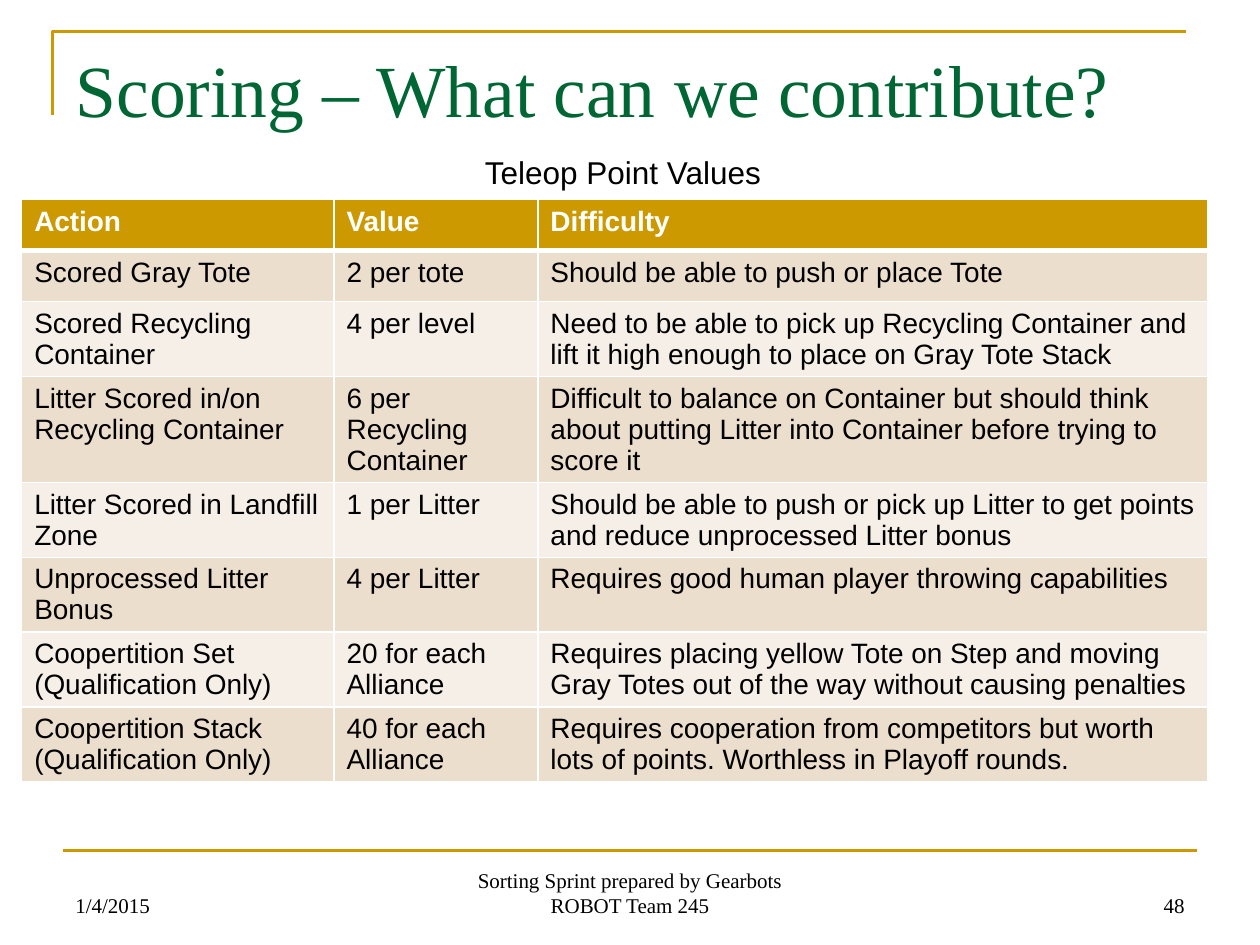
import pptx
import pptx.util
import pptx.dml.color
import pptx.enum.shapes
import pptx.enum.text
from lxml import etree
from pptx.oxml.ns import qn

Pt = pptx.util.Pt
ALIGN = pptx.enum.text.PP_ALIGN
ANCHOR = pptx.enum.text.MSO_ANCHOR
COLORS = {
    "gold": "CC9900",
    "green": "006633",
    "text": "000000",
    "white": "FFFFFF",
    "dark band": "ECDECC",
    "light band": "F6EFE7",
}


def rgb(name):
    return pptx.dml.color.RGBColor.from_string(COLORS[name])


def write(frame, text, font, size, color, align=ALIGN.LEFT, bold=False):
    """Put one formatted run in the first paragraph of a text frame."""
    paragraph = frame.paragraphs[0]
    paragraph.alignment = align
    run = paragraph.add_run()
    run.text = text
    run.font.name = font
    run.font.size = Pt(size)
    run.font.bold = bold
    run.font.color.rgb = rgb(color)


deck = pptx.Presentation()
deck.slide_width, deck.slide_height = Pt(720), Pt(540)
slide = deck.slides.add_slide(deck.slide_layouts[5])
shapes = slide.shapes

# Frame lines
corner_path = shapes.build_freeform(Pt(30), Pt(66))
corner_path.add_line_segments([(Pt(30), Pt(18)), (Pt(678), Pt(18))], close=False)
corner = corner_path.convert_to_shape()
corner.shadow.inherit = False
corner.fill.background()
footer_rule = shapes.add_connector(
    pptx.enum.shapes.MSO_CONNECTOR.STRAIGHT, Pt(36), Pt(486), Pt(684), Pt(486))
etree.SubElement(footer_rule._element.spPr, qn("a:effectLst"))
for rule in (corner, footer_rule):
    rule.line.color.rgb = rgb("gold")
    rule.line.width = Pt(1.5)

# Title
title = shapes.title
title.left, title.top, title.width, title.height = Pt(36), Pt(21.6), Pt(648), Pt(90)
title.text_frame.auto_size = pptx.enum.text.MSO_AUTO_SIZE.NONE
title.text_frame.vertical_anchor = ANCHOR.TOP
write(title.text_frame, "Scoring – What can we contribute?",
      "Times New Roman", 42, "green")

# Point values
scoring = [
    ("Action", "Value", "Difficulty"),
    ("Scored Gray Tote", "2 per tote", "Should be able to push or place Tote"),
    ("Scored Recycling Container", "4 per level",
     "Need to be able to pick up Recycling Container and lift it high enough "
     "to place on Gray Tote Stack"),
    ("Litter Scored in/on Recycling Container", "6 per Recycling Container",
     "Difficult to balance on Container but should think about putting Litter "
     "into Container before trying to score it"),
    ("Litter Scored in Landfill Zone", "1 per Litter",
     "Should be able to push or pick up Litter to get points and reduce "
     "unprocessed Litter bonus"),
    ("Unprocessed Litter Bonus", "4 per Litter",
     "Requires good human player throwing capabilities"),
    ("Coopertition Set (Qualification Only)", "20 for each Alliance",
     "Requires placing yellow Tote on Step and moving Gray Totes out of the "
     "way without causing penalties"),
    ("Coopertition Stack (Qualification Only)", "40 for each Alliance",
     "Requires cooperation from competitors but worth lots of points. "
     "Worthless in Playoff rounds."),
]
column_widths = [178.5, 116.5, 383]
row_height = 29.2
table = shapes.add_table(
    len(scoring), len(column_widths), Pt(12.4), Pt(114),
    Pt(sum(column_widths)), Pt(row_height * len(scoring))).table
for column, width in zip(table.columns, column_widths):
    column.width = Pt(width)

for row, entries in enumerate(scoring):
    table.rows[row].height = Pt(row_height)
    header = row == 0
    band = "gold" if header else "dark band" if row % 2 else "light band"
    # A thicker rule separates the header from the first row
    borders = {"lnL": 1, "lnR": 1, "lnT": 3 if row == 1 else 1,
               "lnB": 3 if header else 1}
    for col, entry in enumerate(entries):
        cell = table.cell(row, col)
        properties = cell._tc.get_or_add_tcPr()
        for side, width in borders.items():
            border = etree.SubElement(properties, qn(f"a:{side}"), w=str(Pt(width)))
            paint = etree.SubElement(border, qn("a:solidFill"))
            etree.SubElement(paint, qn("a:srgbClr"), val=COLORS["white"])
        cell.fill.solid()
        cell.fill.fore_color.rgb = rgb(band)
        write(cell.text_frame, entry, "Arial", 16,
              "white" if header else "text", bold=header)

# Table caption
caption = shapes.add_textbox(Pt(270), Pt(84), Pt(173.5), Pt(29)).text_frame
caption.word_wrap = False
caption.auto_size = pptx.enum.text.MSO_AUTO_SIZE.SHAPE_TO_FIT_TEXT
write(caption, "Teleop Point Values", "Arial", 18, "text")

# Footer
footer = [
    ("1/4/2015", 36, 168, ALIGN.LEFT),
    ("Sorting Sprint prepared by Gearbots ROBOT Team 245", 246, 228, ALIGN.CENTER),
    ("48", 516, 168, ALIGN.RIGHT),
]
for text, left, width, align in footer:
    frame = shapes.add_textbox(Pt(left), Pt(492), Pt(width), Pt(36)).text_frame
    frame.word_wrap = True
    frame.vertical_anchor = ANCHOR.BOTTOM
    write(frame, text, "Times New Roman", 12, "text", align)

deck.save("out.pptx")
